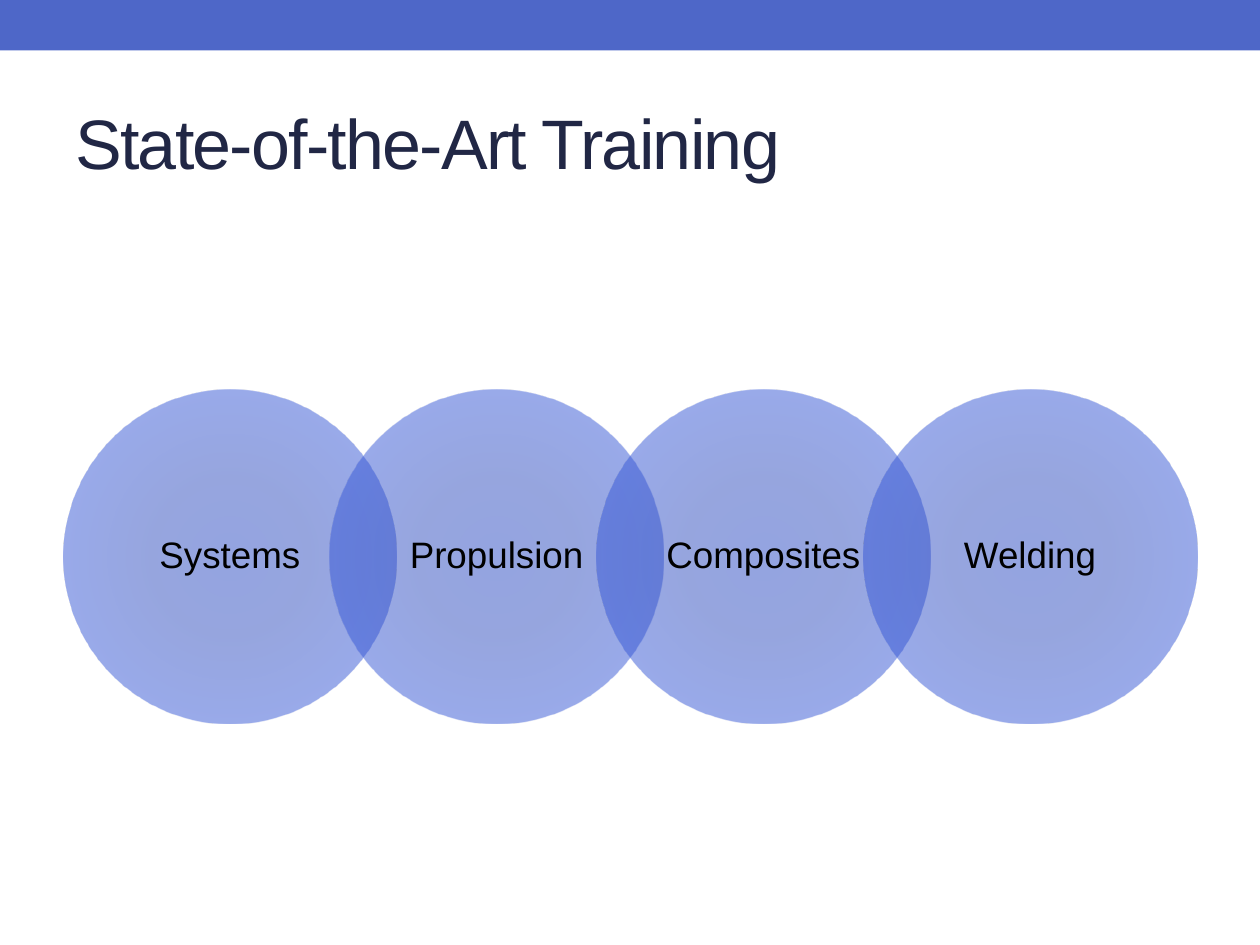
from lxml.etree import SubElement
from pptx import Presentation
from pptx.dml.color import RGBColor
from pptx.enum.shapes import MSO_SHAPE
from pptx.enum.text import MSO_ANCHOR, PP_ALIGN
from pptx.oxml.ns import qn
from pptx.util import Inches, Pt

TITLE = "State-of-the-Art Training"
TOPICS = ["Systems", "Propulsion", "Composites", "Welding"]

COLORS = {"band": "4E67C8", "title": "212745", "label": "000000"}
GRADIENT = [(0, "2949C5"), (34, "2E4CC0"), (70, "3355D6"), (100, "4E67C8")]
OPACITY = 50
FONT = "Arial"

SLIDE_WIDTH, SLIDE_HEIGHT = 10, 7.5
MARGIN = 0.5
DIAMETER = 2.65
CIRCLE_TOP = 3.09


def add_run(paragraph, text, size, color):
    run = paragraph.add_run()
    run.text = text
    run.font.name = FONT
    run.font.size = Pt(size)
    run.font.color.rgb = RGBColor.from_string(COLORS[color])
    return run


def add_plain_shape(slide, kind, left, top, width, height):
    """Add a preset shape without outline or shadow."""
    shape = slide.shapes.add_shape(
        kind, Inches(left), Inches(top), Inches(width), Inches(height))
    shape.shadow.inherit = False
    shape.line.fill.background()
    return shape


def fill_radial(shape):
    """Give the shape a translucent circular gradient."""
    shape.fill.gradient()
    gradient = shape.element.spPr.find(qn("a:gradFill"))
    for child in list(gradient):
        gradient.remove(child)
    stops = SubElement(gradient, qn("a:gsLst"))
    for position, color in GRADIENT:
        stop = SubElement(stops, qn("a:gs"), pos=str(position * 1000))
        rgb = SubElement(stop, qn("a:srgbClr"), val=color)
        SubElement(rgb, qn("a:alpha"), val=str(OPACITY * 1000))
    circle_path = SubElement(gradient, qn("a:path"), path="circle")
    SubElement(circle_path, qn("a:fillToRect"),
               {side: "100000" for side in "ltrb"})


def add_band(slide):
    band = add_plain_shape(slide, MSO_SHAPE.RECTANGLE, 0, 0, SLIDE_WIDTH, 0.4)
    band.fill.solid()
    band.fill.fore_color.rgb = RGBColor.from_string(COLORS["band"])


def add_title(slide):
    box = slide.shapes.add_textbox(
        Inches(MARGIN), Inches(0.58),
        Inches(SLIDE_WIDTH - 2 * MARGIN), Inches(1.08))
    frame = box.text_frame
    frame.word_wrap = True
    frame.vertical_anchor = MSO_ANCHOR.MIDDLE
    run = add_run(frame.paragraphs[0], TITLE, 40, "title")
    run.font._element.set("spc", "-100")


def add_topic(slide, topic, left):
    circle = add_plain_shape(
        slide, MSO_SHAPE.OVAL, left, CIRCLE_TOP, DIAMETER, DIAMETER)
    fill_radial(circle)
    frame = circle.text_frame
    frame.word_wrap = True
    frame.vertical_anchor = MSO_ANCHOR.MIDDLE
    frame.margin_left = frame.margin_right = Inches(0.03)
    frame.margin_top = frame.margin_bottom = Inches(0.03)
    paragraph = frame.paragraphs[0]
    paragraph.alignment = PP_ALIGN.CENTER
    paragraph.line_spacing = 0.9
    add_run(paragraph, topic, 21, "label")


def main():
    presentation = Presentation()
    presentation.slide_width = Inches(SLIDE_WIDTH)
    presentation.slide_height = Inches(SLIDE_HEIGHT)
    slide = presentation.slides.add_slide(presentation.slide_layouts[6])

    add_band(slide)
    add_title(slide)
    step = (SLIDE_WIDTH - 2 * MARGIN - DIAMETER) / (len(TOPICS) - 1)
    for index, topic in enumerate(TOPICS):
        add_topic(slide, topic, MARGIN + index * step)

    presentation.save("out.pptx")


if __name__ == "__main__":
    main()
